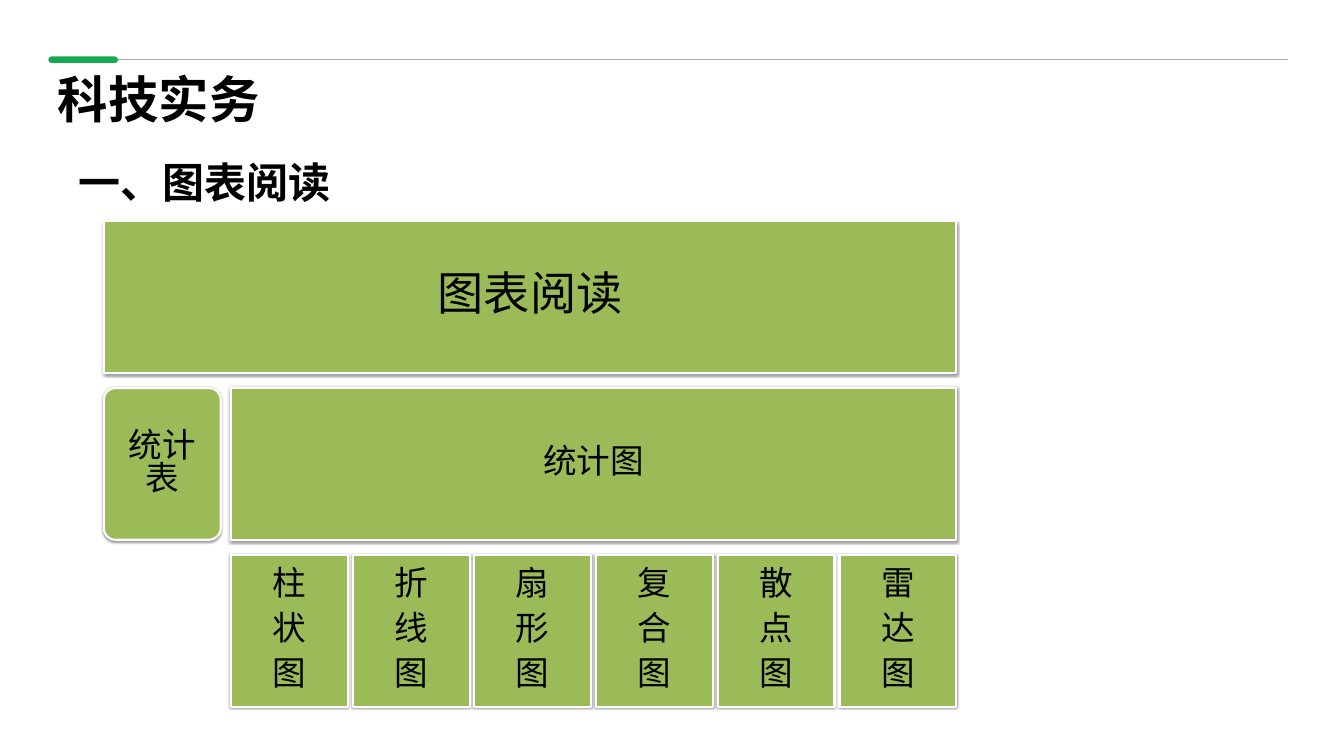
import dataclasses

import pptx
import pptx.dml.color
import pptx.enum.shapes
import pptx.enum.text
import pptx.oxml
import pptx.oxml.ns
import pptx.util

SCALE = 9144  # EMU in one px, 100 px to the inch
FONT = "Noto Sans CJK SC"
BLACK, WHITE, GREEN, ACCENT, RULE = "000000", "FFFFFF", "9BBB59", "16A951", "A7A7A7"
RECT = pptx.enum.shapes.MSO_SHAPE.RECTANGLE
ROUNDED = pptx.enum.shapes.MSO_SHAPE.ROUNDED_RECTANGLE
ALIGN = pptx.enum.text.PP_ALIGN
ANCHOR = pptx.enum.text.MSO_ANCHOR

LEFT, TOP, ROW_HEIGHT, ROW_STEP = 206, 439, 301, 331
TOTAL_WIDTH, CHART_LEFT, CHART_WIDTH, CELL_WIDTH = 1692, 458, 1440, 232
CHART_KINDS = ["柱状图", "折线图", "扇形图", "复合图", "散点图", "雷达图"]


@dataclasses.dataclass
class Block:
    lines: list[str]
    left: int
    row: int
    width: int
    size: int = 48
    inset: int = 20
    rounded: bool = False


def px(length: int) -> pptx.util.Emu:
    return pptx.util.Emu(length * SCALE)


def color(value: str) -> pptx.dml.color.RGBColor:
    return pptx.dml.color.RGBColor.from_string(value)


def place(shape, left: int, top: int, width: int, height: int) -> None:
    shape.left, shape.top = px(left), px(top)
    shape.width, shape.height = px(width), px(height)


def add_effects(shape, content: str = "") -> None:
    """Give a shape its own effect list; an empty one means no shadow."""
    namespace = pptx.oxml.ns.nsdecls("a")
    shape._element.spPr.append(
        pptx.oxml.parse_xml(f"<a:effectLst {namespace}>{content}</a:effectLst>"))


def write(shape, lines: list[str], *, size: int, bold: bool = False,
          align=ALIGN.LEFT, anchor=ANCHOR.TOP, spacing: float = 1.0,
          after: float = 0, inset: int | None = None,
          indents: tuple[int, int] | None = None) -> None:
    frame = shape.text_frame
    frame.word_wrap = True
    frame.auto_size = pptx.enum.text.MSO_AUTO_SIZE.NONE
    frame.vertical_anchor = anchor
    if inset is not None:
        frame.margin_left = frame.margin_right = px(inset)
        frame.margin_top = frame.margin_bottom = px(inset)
    frame.text = "\n".join(lines)
    for para in frame.paragraphs:
        para.alignment = align
        para.line_spacing = spacing
        para.space_before = pptx.util.Pt(0)
        para.space_after = pptx.util.Pt(after)
        if indents:
            properties = para._p.get_or_add_pPr()
            properties.set("marL", str(px(indents[0])))
            properties.set("indent", str(px(indents[1])))
            properties.append(pptx.oxml.parse_xml(
                f"<a:buNone {pptx.oxml.ns.nsdecls('a')}/>"))
        for span in para.runs:
            span.font.size = pptx.util.Pt(size)
            span.font.bold = bold
            span.font.color.rgb = color(BLACK)
            span.font.name = FONT
            span._r.get_or_add_rPr().append(pptx.oxml.parse_xml(
                f'<a:ea {pptx.oxml.ns.nsdecls("a")} typeface="{FONT}"/>'))


def draw_header(page) -> None:
    rule = page.shapes.add_connector(
        pptx.enum.shapes.MSO_CONNECTOR.STRAIGHT, px(183), px(118), px(2555), px(118))
    rule.line.color.rgb = color(RULE)
    rule.line.width = pptx.util.Pt(2.25)
    add_effects(rule)
    marker = page.shapes.add_shape(ROUNDED, px(96), px(112), px(138), px(13))
    marker.adjustments[0] = 0.5
    marker.shadow.inherit = False
    marker.fill.solid()
    marker.fill.fore_color.rgb = color(ACCENT)
    marker.line.fill.background()


def draw_block(group, block: Block) -> None:
    box = group.shapes.add_shape(
        ROUNDED if block.rounded else RECT, px(block.left),
        px(TOP + block.row * ROW_STEP), px(block.width), px(ROW_HEIGHT))
    if block.rounded:
        box.adjustments[0] = 0.1
    box.fill.solid()
    box.fill.fore_color.rgb = color(GREEN)
    box.line.color.rgb = color(WHITE)
    box.line.width = pptx.util.Pt(3)
    add_effects(box, '<a:outerShdw blurRad="40000" dist="20000" dir="5400000" '
                     f'rotWithShape="0"><a:srgbClr val="{BLACK}">'
                     '<a:alpha val="38000"/></a:srgbClr></a:outerShdw>')
    write(box, block.lines, size=block.size, align=ALIGN.CENTER, anchor=ANCHOR.MIDDLE,
          spacing=0.82, after=17, inset=block.inset)


def main() -> None:
    deck = pptx.Presentation()
    deck.slide_width, deck.slide_height = px(2667), px(1500)
    page = deck.slides.add_slide(deck.slide_layouts[1])
    draw_header(page)

    title, heading = page.placeholders
    place(title, 105, 145, 1556, 131)
    write(title, ["科技实务"], size=72, bold=True, spacing=0.88)
    place(heading, 105, 276, 2527, 298)
    write(heading, ["一、图表阅读"], size=60, bold=True, align=ALIGN.JUSTIFY,
          spacing=1.3, indents=(2, 38))

    blocks = [
        Block(["图表阅读"], LEFT, 0, TOTAL_WIDTH, size=66, inset=28),
        Block(["统计表"], LEFT, 1, CELL_WIDTH, rounded=True),
        Block(["统计图"], CHART_LEFT, 1, CHART_WIDTH),
    ]
    step = (CHART_WIDTH - CELL_WIDTH) / (len(CHART_KINDS) - 1)
    for index, kind in enumerate(CHART_KINDS):
        blocks.append(Block(list(kind), CHART_LEFT + round(index * step), 2, CELL_WIDTH))

    hierarchy = page.shapes.add_group_shape()
    for block in blocks:
        draw_block(hierarchy, block)
    deck.save("out.pptx")


if __name__ == "__main__":
    main()
